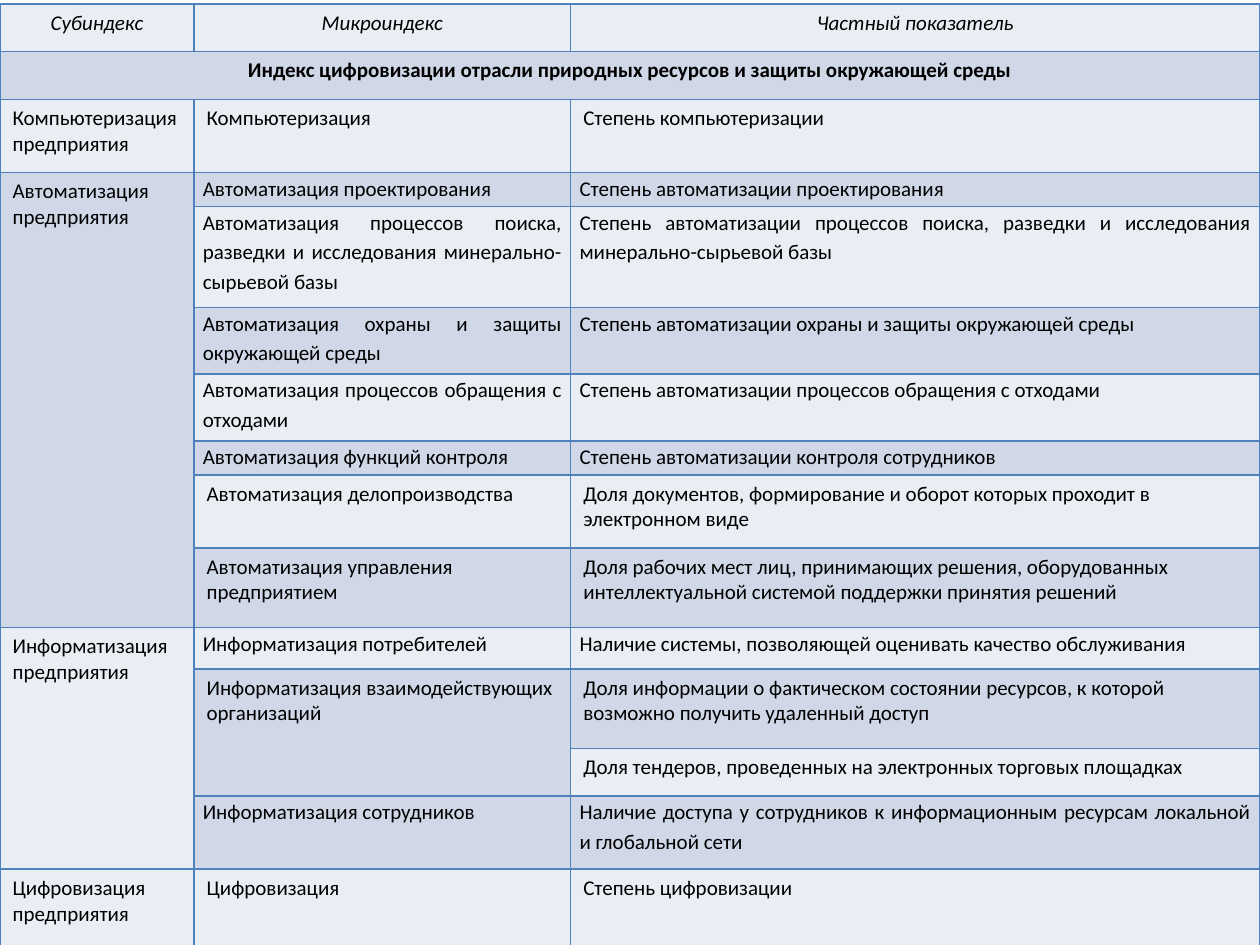
from typing import NamedTuple

from lxml import etree
from pptx import Presentation, util as u
from pptx.dml.color import RGBColor
from pptx.enum import text as t
from pptx.oxml.ns import qn

LIGHT = RGBColor(0xE9, 0xED, 0xF4)
DARK = RGBColor(0xD0, 0xD8, 0xE8)
LINE = RGBColor(0x4F, 0x81, 0xBD)
BLACK = RGBColor(0, 0, 0)
COLS = (0.154, 0.299, 0.547)  # shares of the slide width
TOP = 0.004  # share of the slide height


class Row(NamedTuple):
    """One row; an empty text joins the cell above, one text spans the row."""
    high: float  # inches
    texts: tuple[str, ...]
    tight: bool = False  # justified, without vertical margins
    bold: bool = False
    slant: bool = False


ROWS = (
    Row(0.38, ("Субиндекс", "Микроиндекс", "Частный показатель"), slant=True),
    Row(0.38, ("Индекс цифровизации отрасли природных ресурсов и защиты окружающей среды",), bold=True),
    Row(0.58, ("Компьютеризация предприятия", "Компьютеризация", "Степень компьютеризации")),
    Row(0.27, ("Автоматизация предприятия", "Автоматизация проектирования",
               "Степень автоматизации проектирования"), tight=True),
    Row(0.8, ("", "Автоматизация процессов поиска, разведки и исследования минерально-сырьевой базы",
              "Степень автоматизации процессов поиска, разведки и исследования минерально-сырьевой базы"),
        tight=True),
    Row(0.53, ("", "Автоматизация охраны и защиты окружающей среды",
               "Степень автоматизации охраны и защиты окружающей среды"), tight=True),
    Row(0.53, ("", "Автоматизация процессов обращения с отходами",
               "Степень автоматизации процессов обращения с отходами"), tight=True),
    Row(0.27, ("", "Автоматизация функций контроля",
               "Степень автоматизации контроля сотрудников"), tight=True),
    Row(0.58, ("", "Автоматизация делопроизводства",
               "Доля документов, формирование и оборот которых проходит в электронном виде")),
    Row(0.63, ("", "Автоматизация управления предприятием",
               "Доля рабочих мест лиц, принимающих решения, оборудованных "
               "интеллектуальной системой поддержки принятия решений")),
    Row(0.33, ("Информатизация предприятия", "Информатизация потребителей",
               "Наличие системы, позволяющей оценивать качество обслуживания"), tight=True),
    Row(0.63, ("", "Информатизация взаимодействующих организаций",
               "Доля информации о фактическом состоянии ресурсов, к которой возможно получить удаленный доступ")),
    Row(0.38, ("", "", "Доля тендеров, проведенных на электронных торговых площадках")),
    Row(0.58, ("", "Информатизация сотрудников",
               "Наличие доступа у сотрудников к информационным ресурсам локальной и глобальной сети"),
        tight=True),
    Row(0.63, ("Цифровизация предприятия", "Цифровизация", "Степень цифровизации")),
)


def frame(cell) -> None:
    """Put a thin line on all four sides of a cell."""
    props = cell._tc.get_or_add_tcPr()
    for side in ("lnL", "lnR", "lnT", "lnB"):
        line = etree.SubElement(props, qn(f"a:{side}"), w=str(u.Pt(1)))
        fill = etree.SubElement(line, qn("a:solidFill"))
        etree.SubElement(fill, qn("a:srgbClr"), val=str(LINE))


def write(cell, words: str, row: Row, tight: bool) -> None:
    """Fill a cell with text in the style of its row."""
    cell.text_frame.text = words
    para = cell.text_frame.paragraphs[0]
    if tight:
        cell.margin_left = cell.margin_right = u.Inches(0.07)
        cell.margin_top = cell.margin_bottom = 0
        para.alignment = t.PP_ALIGN.JUSTIFY
        para.line_spacing = 1.15
    elif row.bold or row.slant:
        para.alignment = t.PP_ALIGN.CENTER
    font = para.runs[0].font
    font.name, font.size = "Calibri", u.Pt(12)
    font.bold, font.italic = row.bold, row.slant
    font.color.rgb = BLACK


def merge(table) -> None:
    """Join the full-width row and the runs of empty texts below a cell."""
    for r, row in enumerate(ROWS):
        if len(row.texts) == 1:
            table.cell(r, 0).merge(table.cell(r, len(COLS) - 1))
            continue
        for c, words in enumerate(row.texts):
            end = r
            while words and end + 1 < len(ROWS) and ROWS[end + 1].texts[c:c + 1] == ("",):
                end += 1
            if end > r:
                table.cell(r, c).merge(table.cell(end, c))


def main() -> None:
    deck = Presentation()
    deck.slide_width, deck.slide_height = u.Inches(10), u.Inches(7.5)
    wide, high = deck.slide_width, deck.slide_height
    slide = deck.slides.add_slide(deck.slide_layouts[6])

    # Grid
    total = u.Inches(sum(row.high for row in ROWS))
    table = slide.shapes.add_table(
        len(ROWS), len(COLS), 0, int(high * TOP), wide, total).table
    table.first_row = table.horz_banding = False
    for col, share in zip(table.columns, COLS):
        col.width = int(wide * share)

    # Cells, banded row by row
    for r, row in enumerate(ROWS):
        table.rows[r].height = u.Inches(row.high)
        for c in range(len(COLS)):
            cell = table.cell(r, c)
            frame(cell)
            cell.fill.solid()
            cell.fill.fore_color.rgb = DARK if r % 2 else LIGHT
            if c < len(row.texts) and row.texts[c]:
                write(cell, row.texts[c], row, row.tight and c > 0)
    merge(table)
    deck.save("out.pptx")


if __name__ == "__main__":
    main()
